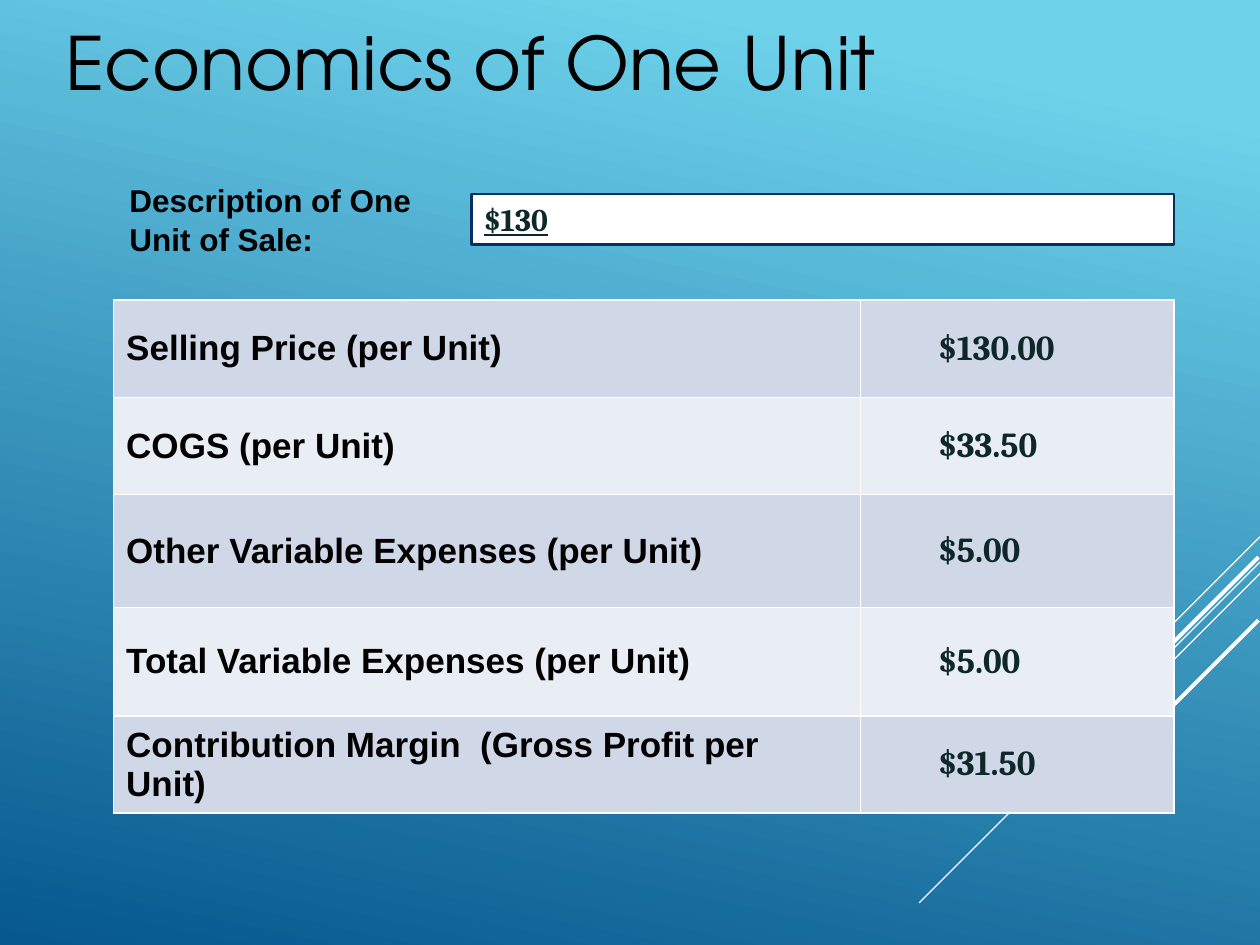
import pptx
import pptx.dml.color
import pptx.enum.shapes
import pptx.enum.text
import pptx.oxml
import pptx.oxml.ns
import pptx.util
from pptx.util import Cm

INK, VALUE_INK, WHITE, NAVY = "000000", "0E282A", "FFFFFF", "052F61"
BANDS = ("D0D8E8", "E9EDF4")


def color(hex_code):
    """Turn a hex string into a colour."""
    return pptx.dml.color.RGBColor.from_string(hex_code)


def xml(markup):
    """Parse a fragment of DrawingML."""
    return pptx.oxml.parse_xml(markup.replace(">", f" {pptx.oxml.ns.nsdecls('a')}>", 1))


def write(frame, text, font="Arial", size=18, ink=INK, bold=True, underline=False,
          anchor="TOP", spacing=1.0, tab=None):
    """Fill a text frame with one formatted paragraph."""
    frame.word_wrap = True
    frame.vertical_anchor = pptx.enum.text.MSO_ANCHOR[anchor]
    paragraph = frame.paragraphs[0]
    paragraph.alignment = pptx.enum.text.PP_ALIGN.LEFT
    paragraph.line_spacing = spacing
    if tab:
        paragraph._p.get_or_add_pPr().append(
            xml(f'<a:tabLst><a:tab pos="{tab}" algn="l"/></a:tabLst>'))
    run = paragraph.add_run()
    run.text = text
    run.font.name, run.font.size = font, pptx.util.Pt(size)
    run.font.bold, run.font.underline = bold, underline
    run.font.color.rgb = color(ink)


class UnitSlide:
    """Hold the style and the slide being drawn."""

    def __init__(self, deck):
        """Add a blank slide with a sloping gradient."""
        self.slide = deck.slides.add_slide(deck.slide_layouts[6])
        self.edge = pptx.util.Pt(1)
        backdrop = self.slide.background.fill
        backdrop.gradient()
        backdrop.gradient_angle = 258
        for stop, (position, shade) in zip(backdrop.gradient_stops,
                                           ((0.1, "6ED2EB"), (1, "06588E"))):
            stop.position, stop.color.rgb = position, color(shade)

    def streak(self, right, top, run, weight):
        """Draw a white 45-degree line falling to the left."""
        line = self.slide.shapes.add_connector(
            pptx.enum.shapes.MSO_CONNECTOR.STRAIGHT,
            Cm(right), Cm(top), Cm(right - run), Cm(top + run))
        line.line.color.rgb = color(WHITE)
        line.line.width = pptx.util.Pt(weight)
        line._element.spPr.append(xml("<a:effectLst></a:effectLst>"))

    def label(self, box, text, **style):
        """Place plain text."""
        write(self.slide.shapes.add_textbox(*map(Cm, box)).text_frame, text, **style)

    def field(self, box, text, **style):
        """Draw a white framed answer box."""
        answer = self.slide.shapes.add_shape(
            pptx.enum.shapes.MSO_SHAPE.RECTANGLE, *map(Cm, box))
        answer.shadow.inherit = False
        answer.fill.solid()
        answer.fill.fore_color.rgb = color(WHITE)
        answer.line.color.rgb = color(NAVY)
        answer.line.width = pptx.util.Pt(1.5)
        write(answer.text_frame, text, anchor="MIDDLE", **style)

    def cell(self, cell, text, band, **style):
        """Fill one table cell and edge it in white."""
        write(cell.text_frame, text, size=20, **style)
        cell.vertical_anchor = pptx.enum.text.MSO_ANCHOR.MIDDLE
        cell.fill.solid()
        cell.fill.fore_color.rgb = color(band)
        for index, side in enumerate("LRTB"):
            cell._tc.get_or_add_tcPr().insert(index, xml(
                f'<a:ln{side} w="{self.edge}"><a:solidFill><a:srgbClr val="{WHITE}"/>'
                f"</a:solidFill></a:ln{side}>"))

    def costs(self, box, widths, rows):
        """Draw the banded table of costs."""
        table = self.slide.shapes.add_table(len(rows), len(widths), *map(Cm, box)).table
        for column, width in zip(table.columns, widths):
            column.width = Cm(width)
        for index, (item, amount, height) in enumerate(rows):
            band = BANDS[index % 2]
            table.rows[index].height = Cm(height)
            self.cell(table.cell(index, 0), item, band)
            self.cell(table.cell(index, 1), "\t" + amount, band,
                      font="Cambria", ink=VALUE_INK, tab=Cm(1.3))


def main():
    """Build and save the slide."""
    deck = pptx.Presentation()
    deck.slide_width, deck.slide_height = Cm(25.4), Cm(19.05)
    unit = UnitSlide(deck)
    for streak in ((25.4, 10.82, 2.11, 0.75), (25.4, 11.33, 6.87, 0.75),
                   (25.4, 11.56, 4.37, 0.75), (25.37, 11.23, 3.99, 2.25),
                   (25.37, 12.5, 2.9, 2.25)):
        unit.streak(*streak)
    unit.label((1.07, 0.43, 22.86, 2.54), "Economics of One Unit",
               font="TeX Gyre Adventor", size=42, bold=False, spacing=0.9)
    unit.costs((2.29, 6.05, 21.39, 10.36), (15.06, 6.32), (
        ("Selling Price (per Unit)", "$130.00", 1.96),
        ("COGS (per Unit)", "$33.50", 1.96),
        ("Other Variable Expenses (per Unit)", "$5.00", 2.28),
        ("Total Variable Expenses (per Unit)", "$5.00", 2.18),
        ("Contribution Margin  (Gross Profit per Unit)", "$31.50", 1.96)))
    unit.label((2.36, 3.48, 7.16, 1.8), "Description of One Unit of Sale:", spacing=1.05)
    unit.field((9.5, 3.91, 14.17, 1.02), "$130",
               font="Cambria", ink=VALUE_INK, underline=True)
    deck.save("out.pptx")


if __name__ == "__main__":
    main()
